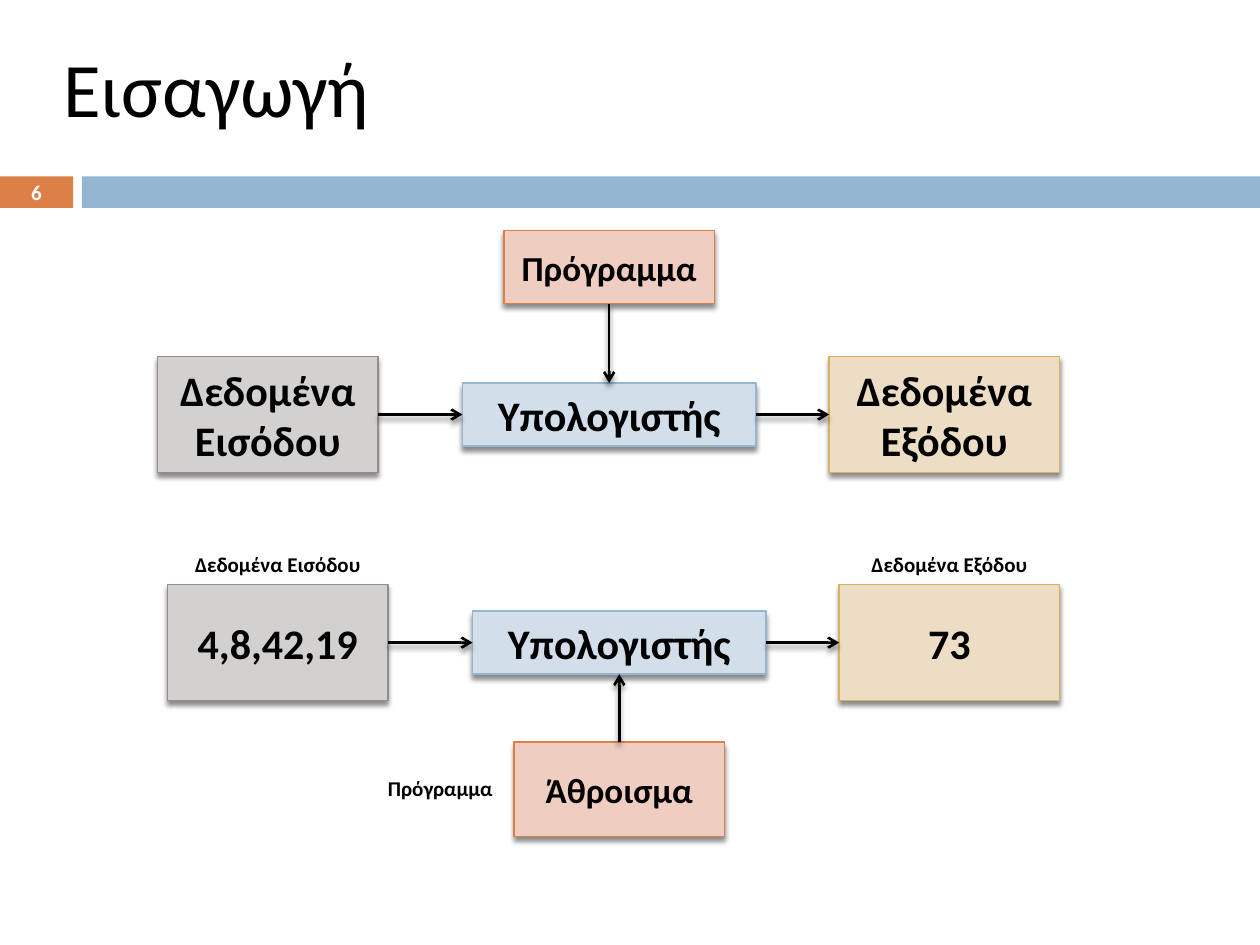
from lxml import etree
from pptx import Presentation
from pptx import util as u
from pptx.dml.color import RGBColor
from pptx.enum import shapes, text
from pptx.oxml import ns
from pptx.util import Inches

FONT = "Calibri"
COLORS = {
    "black": "000000", "white": "FFFFFF",
    "orange": "DD8047", "blue": "94B6D2",
    "input_fill": "D3D0D0", "input_line": "968C8C",
    "output_fill": "EDDDC4", "output_line": "D8B25C",
    "computer_fill": "D2DEEA", "computer_line": "94B6D2",
    "program_fill": "EFCDC1", "program_line": "DD8047",
}
TOP, LEFT, BOTTOM, RIGHT = range(4)


def color(name):
    return RGBColor.from_string(COLORS[name])


def add_shadow(item):
    """Give a shape or connector a soft shadow just below it."""
    properties = item._element.spPr
    effects = properties.find(ns.qn("a:effectLst"))
    if effects is None:
        effects = etree.SubElement(properties, ns.qn("a:effectLst"))
    shadow = etree.SubElement(effects, ns.qn("a:outerShdw"), blurRad=str(u.Pt(3)),
                              dist=str(u.Pt(2.4)), dir="5400000", rotWithShape="0")
    tint = etree.SubElement(shadow, ns.qn("a:srgbClr"), val=COLORS["black"])
    etree.SubElement(tint, ns.qn("a:alpha"), val="45000")


def write(box, words, size, bold=True, ink="black", align=text.PP_ALIGN.CENTER,
          anchor=text.MSO_ANCHOR.MIDDLE):
    frame = box.text_frame
    frame.word_wrap = True
    frame.vertical_anchor = anchor
    para = frame.paragraphs[0]
    para.alignment = align
    span = para.add_run()
    span.text = words
    span.font.name, span.font.size, span.font.bold = FONT, u.Pt(size), bold
    span.font.color.rgb = color(ink)


def add_rectangle(parent, left, top, width, height, fill):
    box = parent.shapes.add_shape(shapes.MSO_SHAPE.RECTANGLE, Inches(left), Inches(top),
                                  Inches(width), Inches(height))
    box.shadow.inherit = False
    box.fill.solid()
    box.fill.fore_color.rgb = color(fill)
    box.line.fill.background()
    return box


def add_node(parent, left, top, width, height, role, words, size=24):
    box = add_rectangle(parent, left, top, width, height, role + "_fill")
    box.line.color.rgb = color(role + "_line")
    box.line.width = u.Pt(0.79)
    add_shadow(box)
    write(box, words, size)
    return box


def add_caption(parent, left, top, width, words):
    box = parent.shapes.add_textbox(Inches(left), Inches(top), Inches(width), Inches(0.3))
    write(box, words, 12, anchor=text.MSO_ANCHOR.TOP)
    box.text_frame.auto_size = text.MSO_AUTO_SIZE.SHAPE_TO_FIT_TEXT


def add_arrow(parent, source, source_side, target, target_side):
    arrow = parent.shapes.add_connector(shapes.MSO_CONNECTOR.STRAIGHT, 0, 0, 0, 0)
    arrow.begin_connect(source, source_side)
    arrow.end_connect(target, target_side)
    arrow.line.color.rgb = color("black")
    arrow.line.width = u.Pt(1.5)
    etree.SubElement(arrow.line._get_or_add_ln(), ns.qn("a:tailEnd"), type="arrow")
    add_shadow(arrow)


def add_header(page, title_words, number):
    title = page.shapes.title
    title.left, title.top = Inches(0.4), Inches(0.23)
    title.width, title.height = Inches(9), Inches(0.92)
    write(title, title_words, 44, bold=False, ink="black", align=text.PP_ALIGN.LEFT)
    badge = add_rectangle(page, 0, 1.4, 0.58, 0.25, "orange")
    frame = badge.text_frame
    frame.margin_left = frame.margin_right = frame.margin_top = frame.margin_bottom = 0
    write(badge, number, 12, ink="white")
    add_rectangle(page, 0.65, 1.4, 9.35, 0.25, "blue")


def add_flow(page, left, top, width, input_words, output_words):
    """Place input, computer and output in a row; return the computer."""
    group = page.shapes.add_group_shape()
    height, output_left = 0.92, 5.33
    source = add_node(group, left, top, 1.75, height, "input", input_words)
    result = add_node(group, left + output_left, top, width - output_left, height,
                      "output", output_words)
    computer = add_node(group, left + 2.42, top + (height - 0.5) / 2, 2.33, 0.5,
                        "computer", "Υπολογιστής")
    add_arrow(group, source, RIGHT, computer, LEFT)
    add_arrow(group, computer, RIGHT, result, LEFT)
    return computer


def add_general_diagram(page, left, top):
    computer = add_flow(page, left, top + 1, 7.16, "Δεδομένα Εισόδου", "Δεδομένα Εξόδου")
    program = add_node(page, left + 2.75, top, 1.67, 0.58, "program", "Πρόγραμμα", 20)
    add_arrow(page, program, BOTTOM, computer, TOP)


def add_example_diagram(page, left, top):
    computer = add_flow(page, left, top + 0.31, 7.08, "4,8,42,19", "73")
    group = page.shapes.add_group_shape()
    program = add_node(group, left + 2.75, top + 1.56, 1.67, 0.75, "program", "Άθροισμα", 20)
    add_caption(group, left + 1.5, top + 1.78, 1.33, "Πρόγραμμα")
    add_arrow(page, program, TOP, computer, BOTTOM)
    add_caption(page, left, top, 1.75, "Δεδομένα Εισόδου")
    add_caption(page, left + 5.33, top, 1.75, "Δεδομένα Εξόδου")


def main():
    deck = Presentation()
    deck.slide_width, deck.slide_height = Inches(10), Inches(7.5)
    page = deck.slides.add_slide(deck.slide_layouts[5])
    add_header(page, "Εισαγωγή", "6")
    add_general_diagram(page, 1.25, 1.83)
    add_example_diagram(page, 1.33, 4.33)
    deck.save("out.pptx")


if __name__ == "__main__":
    main()
